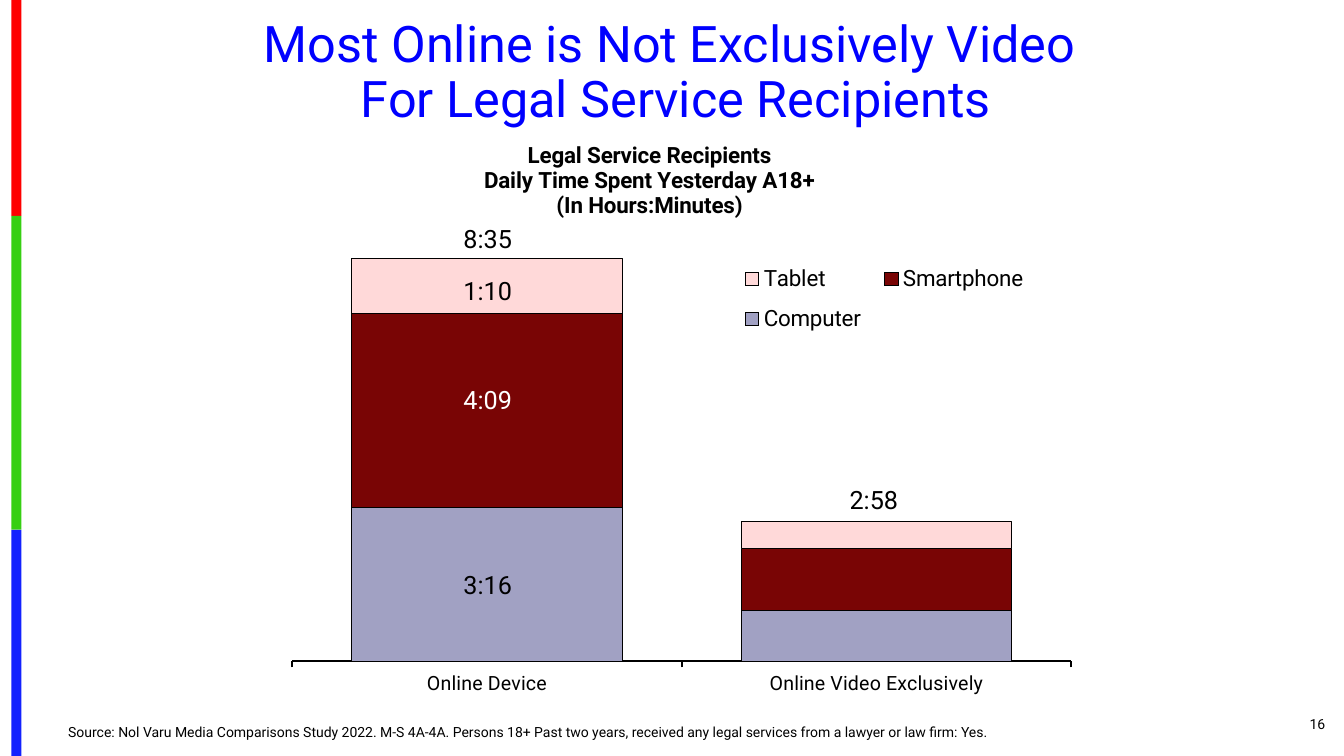
from lxml import etree
from pptx import Presentation
from pptx.chart.data import CategoryChartData
from pptx.dml.color import RGBColor
from pptx.enum.chart import XL_CHART_TYPE, XL_LEGEND_POSITION, XL_TICK_LABEL_POSITION, XL_TICK_MARK
from pptx.enum.shapes import MSO_SHAPE
from pptx.enum.text import MSO_ANCHOR, PP_ALIGN
from pptx.oxml.ns import qn
from pptx.util import Cm, Pt

STACKED = XL_CHART_TYPE.COLUMN_STACKED
LEGEND_RIGHT = XL_LEGEND_POSITION.RIGHT
NO_LABELS = XL_TICK_LABEL_POSITION.NONE
TICK_NONE, TICK_OUT = XL_TICK_MARK.NONE, XL_TICK_MARK.OUTSIDE
RECTANGLE = MSO_SHAPE.RECTANGLE
TOP, MIDDLE, BOTTOM = MSO_ANCHOR.TOP, MSO_ANCHOR.MIDDLE, MSO_ANCHOR.BOTTOM
LEFT, CENTER, RIGHT = PP_ALIGN.LEFT, PP_ALIGN.CENTER, PP_ALIGN.RIGHT

FONT = "Roboto"
COLORS = {
    "red": "FE0000", "green": "36CF12", "blue": "1322FE",
    "headline": "0000FF", "black": "000000", "white": "FFFFFF",
    "computer": "A1A1C3", "smartphone": "790505", "tablet": "FFD9D9",
}

HEADLINE = ["Most Online is Not Exclusively Video ", "For Legal Service Recipients"]
SOURCE = ("Source: Nol Varu Media Comparisons Study 2022. M-S 4A-4A. Persons 18+ Past two years, "
          "received any legal services from a lawyer or law firm: Yes.")
CHART_TITLE = ["Legal Service Recipients", "Daily Time Spent Yesterday A18+", "(In Hours:Minutes)"]
DEVICES = ["Online Device", "Online Video Exclusively"]
TIME_SPENT = {"Computer": (79, 26), "Smartphone": (100, 32), "Tablet": (28, 14)}

# Left, top, text and colour of each time label
TIME_LABELS = [
    (21.16, 12.07, "2:58", "black"),
    (11.43, 5.51, "8:35", "black"),
    (11.43, 6.81, "1:10", "black"),
    (11.43, 9.55, "4:09", "white"),
    (11.43, 14.22, "3:16", "black"),
]

# Colour, top and bottom of each part of the side stripe
STRIPE = [("red", 0, 5.44), ("green", 5.44, 13.35), ("blue", 13.35, 19.05)]


def rgb(name):
    return RGBColor.from_string(COLORS[name])


def style_font(font, size, color="black", bold=False):
    formats = {"name": FONT, "size": Pt(size), "bold": bold}
    for attribute, value in formats.items():
        setattr(font, attribute, value)
    font.color.rgb = rgb(color)


def add_stripe_part(slide, color, top, bottom):
    part = slide.shapes.add_shape(RECTANGLE, Cm(0.29), Cm(top), Cm(0.25), Cm(bottom - top))
    part.shadow.inherit = False
    part.fill.solid()
    part.fill.fore_color.rgb = rgb(color)
    part.line.fill.background()


def add_text(slide, box, lines, size, color="black", align=LEFT, anchor=TOP,
             spacing=1.0, wrap=True):
    frame = slide.shapes.add_textbox(*map(Cm, box)).text_frame
    for attribute, value in {"word_wrap": wrap, "vertical_anchor": anchor}.items():
        setattr(frame, attribute, value)
    for index, line in enumerate(lines):
        paragraph = frame.add_paragraph() if index else frame.paragraphs[0]
        for attribute, value in {"alignment": align, "line_spacing": spacing}.items():
            setattr(paragraph, attribute, value)
        run = paragraph.add_run()
        run.text = line
        style_font(run.font, size, color)


def place_in_chart(element, **layout_values):
    """Fix a chart part at fractions of the chart area."""
    for old_layout in element.findall(qn("c:layout")):
        element.remove(old_layout)
    layout = etree.Element(qn("c:layout"))
    manual = etree.SubElement(layout, qn("c:manualLayout"))
    for tag, value in layout_values.items():
        etree.SubElement(manual, qn(f"c:{tag}")).set("val", str(value))
    overlay = element.find(qn("c:overlay"))
    if overlay is None:
        element.insert(0, layout)
    else:
        overlay.addprevious(layout)


def style_series(plot):
    for series in plot.series:
        series.format.fill.solid()
        series.format.fill.fore_color.rgb = rgb(series.name.lower())
        series.format.line.color.rgb = rgb("black")
        series.format.line.width = Pt(0.75)


def style_axes(chart):
    device_axis, time_axis = chart.category_axis, chart.value_axis
    device_axis.major_tick_mark = TICK_OUT
    device_axis.format.line.color.rgb = rgb("black")
    device_axis.format.line.width = Pt(1.5)
    style_font(device_axis.tick_labels.font, 14)
    time_formats = {
        "minimum_scale": 0, "maximum_scale": 232, "has_major_gridlines": False,
        "major_tick_mark": TICK_NONE, "tick_label_position": NO_LABELS, "visible": False,
    }
    for attribute, value in time_formats.items():
        setattr(time_axis, attribute, value)


def add_chart_title(chart):
    chart.has_title = True
    frame = chart.chart_title.text_frame
    for index, line in enumerate(CHART_TITLE):
        paragraph = frame.add_paragraph() if index else frame.paragraphs[0]
        run = paragraph.add_run()
        run.text = line
        style_font(run.font, 16, bold=True)
    title = chart.chart_title._element
    place_in_chart(title, xMode="edge", yMode="edge", x=0.32, y=0.1)


def add_legend(chart):
    chart.has_legend = True
    legend = chart.legend
    legend.position = LEGEND_RIGHT
    legend.include_in_layout = False
    style_font(legend.font, 16)
    place_in_chart(legend._element, xMode="edge", yMode="edge", x=0.6, y=0.28, w=0.35, h=0.15)


def add_time_chart(slide, box):
    data = CategoryChartData()
    data.categories = DEVICES
    for device, values in TIME_SPENT.items():
        data.add_series(device, values)
    chart = slide.shapes.add_chart(STACKED, *map(Cm, box), data).chart
    style_font(chart.font, 10)
    plot = chart.plots[0]
    for attribute, value in {"gap_width": 44, "overlap": 100, "vary_by_categories": False}.items():
        setattr(plot, attribute, value)
    style_series(plot)
    style_axes(chart)
    add_chart_title(chart)
    add_legend(chart)
    plot_area = chart._chartSpace.find(f".//{qn('c:plotArea')}")
    place_in_chart(plot_area, layoutTarget="inner", xMode="edge", yMode="edge",
                   x=0.107, y=0.214, w=0.879, h=0.716)


def main():
    deck = Presentation()
    deck.slide_width, deck.slide_height = Cm(33.87), Cm(19.05)
    slide = deck.slides.add_slide(deck.slide_layouts[6])

    # Side stripe and page number
    for color, top, bottom in STRIPE:
        add_stripe_part(slide, color, top, bottom)
    add_text(slide, (30.91, 17.73, 2.74, 1.02), ["16"], 10, align=RIGHT, anchor=MIDDLE)

    # Chart with its source
    add_time_chart(slide, (4.98, 1.9, 22.33, 15.88))
    add_text(slide, (1.47, 18.14, 27.1, 0.64), [SOURCE], 10, anchor=BOTTOM, spacing=0.9)

    # Time labels over the columns
    for left, top, time, color in TIME_LABELS:
        add_text(slide, (left, top, 1.8, 1.02), [time], 18, color, wrap=False)

    # Headline
    add_text(slide, (0.84, 0.36, 32.39, 3.02), HEADLINE, 36, "headline", CENTER, spacing=0.9)

    deck.save("out.pptx")


if __name__ == "__main__":
    main()
